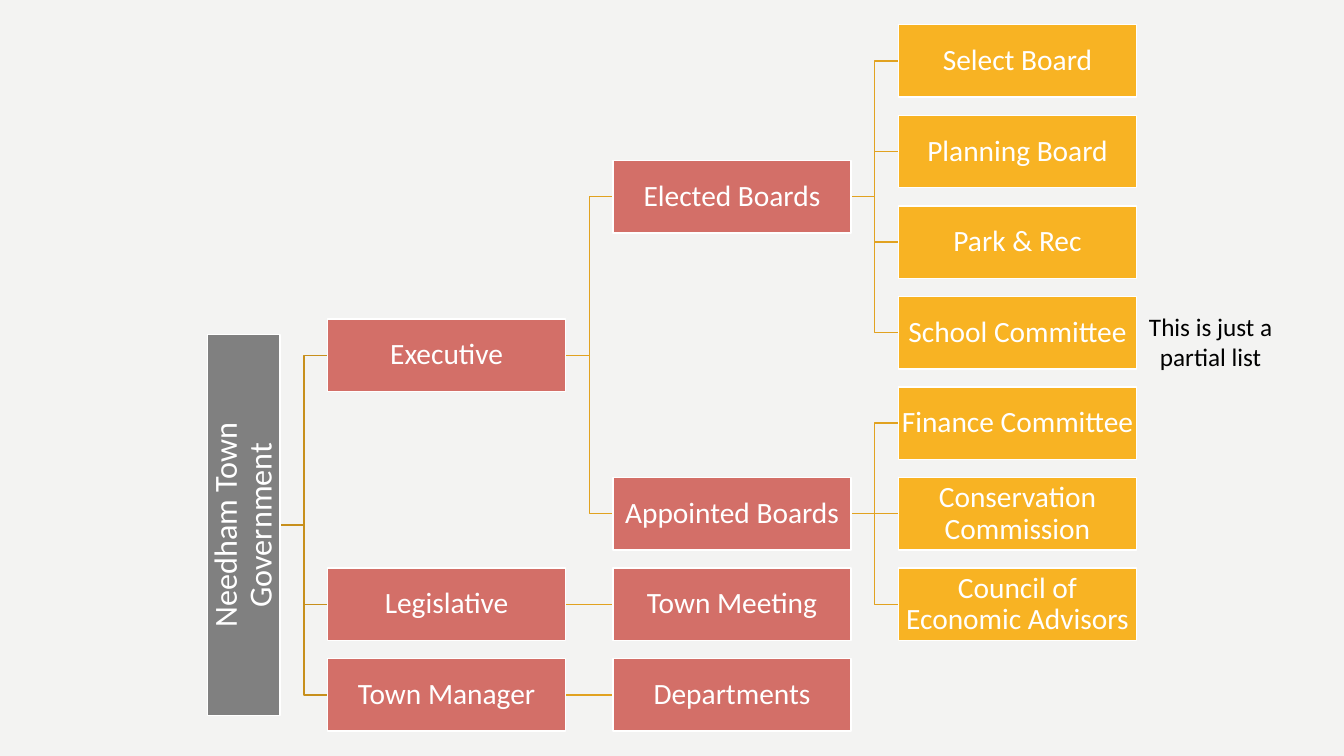
import lxml.etree
import pptx
import pptx.dml.color
import pptx.enum.shapes
import pptx.enum.text
import pptx.oxml.ns
import pptx.util

Pt = pptx.util.Pt
HUES = {"back": "F3F3F2", "root": "808080", "rose": "D36F68", "gold": "F8B323",
        "white": "FFFFFF", "black": "000000", "stem": "C78F1C", "twig": "E1A220"}
WIDE, HIGH, GAP = 170, 51.8, 33.9
LEFT, TOP, STEP = 234, 43.5, 64.7
LONG = 272

ROOT = "Needham Town Government"
TREE = {
    "Executive": {
        "Elected Boards": {"Select Board": 0, "Planning Board": 1,
                           "Park & Rec": 2, "School Committee": 3},
        "Appointed Boards": {"Finance Committee": 4, "Conservation Commission": 5,
                             "Council of Economic Advisors": 6},
    },
    "Legislative": {"Town Meeting": 6},
    "Town Manager": {"Departments": 7},
}


def tint(name):
    return pptx.dml.color.RGBColor.from_string(HUES[name])


def write(frame, text, size=21, hue="white", inset=None, space=None):
    frame.word_wrap = True
    if inset is not None:
        frame.margin_left = frame.margin_right = Pt(inset)
        frame.margin_top = frame.margin_bottom = Pt(inset)
        frame.vertical_anchor = pptx.enum.text.MSO_ANCHOR.MIDDLE
    para = frame.paragraphs[0]
    para.alignment = pptx.enum.text.PP_ALIGN.CENTER
    para.line_spacing = space
    run = para.add_run()
    run.text = text
    run.font.name = "Calibri"
    run.font.size = Pt(size)
    run.font.color.rgb = tint(hue)


def level(kids):
    if isinstance(kids, int):
        return kids
    rows = [level(kid) for kid in kids.values()]
    return (rows[0] + rows[-1]) / 2


def height(kids):
    return TOP + STEP * level(kids)


class Chart:
    def __init__(self, slide):
        self.slide = slide
        self.shapes = slide.shapes
        fill = slide.background.fill
        fill.solid()
        fill.fore_color.rgb = tint("back")

    def box(self, text, mid, y, hue, wide=WIDE, size=21, inset=0.8, turn=0):
        shape = self.shapes.add_shape(
            pptx.enum.shapes.MSO_SHAPE.RECTANGLE,
            Pt(mid - wide / 2), Pt(y - HIGH / 2), Pt(wide), Pt(HIGH))
        shape.rotation = turn
        shape.shadow.inherit = False
        shape.fill.solid()
        shape.fill.fore_color.rgb = tint(hue)
        shape.line.color.rgb = tint("white")
        shape.line.width = Pt(1)
        write(shape.text_frame, text, size=size, inset=inset, space=0.9)

    def link(self, x, y, end, hue):
        if y == end:
            line = self.shapes.add_connector(
                pptx.enum.shapes.MSO_CONNECTOR.STRAIGHT,
                Pt(x), Pt(y), Pt(x + GAP), Pt(y))
        else:
            half = x + GAP / 2
            path = self.shapes.build_freeform(Pt(x), Pt(y))
            path.add_line_segments(
                [(Pt(half), Pt(y)), (Pt(half), Pt(end)), (Pt(x + GAP), Pt(end))],
                close=False)
            line = path.convert_to_shape()
            line.fill.background()
            line.shadow.inherit = False
        line.line.color.rgb = tint(hue)
        line.line.width = Pt(1)
        if y == end:
            lxml.etree.SubElement(line.element.spPr, pptx.oxml.ns.qn("a:effectLst"))

    def branch(self, kids, col):
        x = LEFT + col * (WIDE + GAP)
        for kid in kids.values():
            self.link(x - GAP, height(kids), height(kid), "twig" if col else "stem")
        for name, kid in kids.items():
            if isinstance(kid, dict):
                self.branch(kid, col + 1)
            self.box(name, x + WIDE / 2, height(kid), "gold" if col == 2 else "rose")

    def note(self, text, x, y, wide, high):
        frame = self.shapes.add_textbox(Pt(x), Pt(y), Pt(wide), Pt(high)).text_frame
        write(frame, text, size=18, hue="black")
        frame.auto_size = pptx.enum.text.MSO_AUTO_SIZE.SHAPE_TO_FIT_TEXT


def main():
    deck = pptx.Presentation()
    deck.slide_width, deck.slide_height = Pt(960), Pt(540)
    chart = Chart(deck.slides.add_slide(deck.slide_layouts[6]))
    chart.note("This is just a partial list", 809.3, 218.9, 110.9, 51.1)
    chart.branch(TREE, 0)
    chart.box(ROOT, LEFT - GAP - HIGH / 2, height(TREE), "root",
              wide=LONG, size=23, inset=1.4, turn=270)
    deck.save("out.pptx")


if __name__ == "__main__":
    main()
